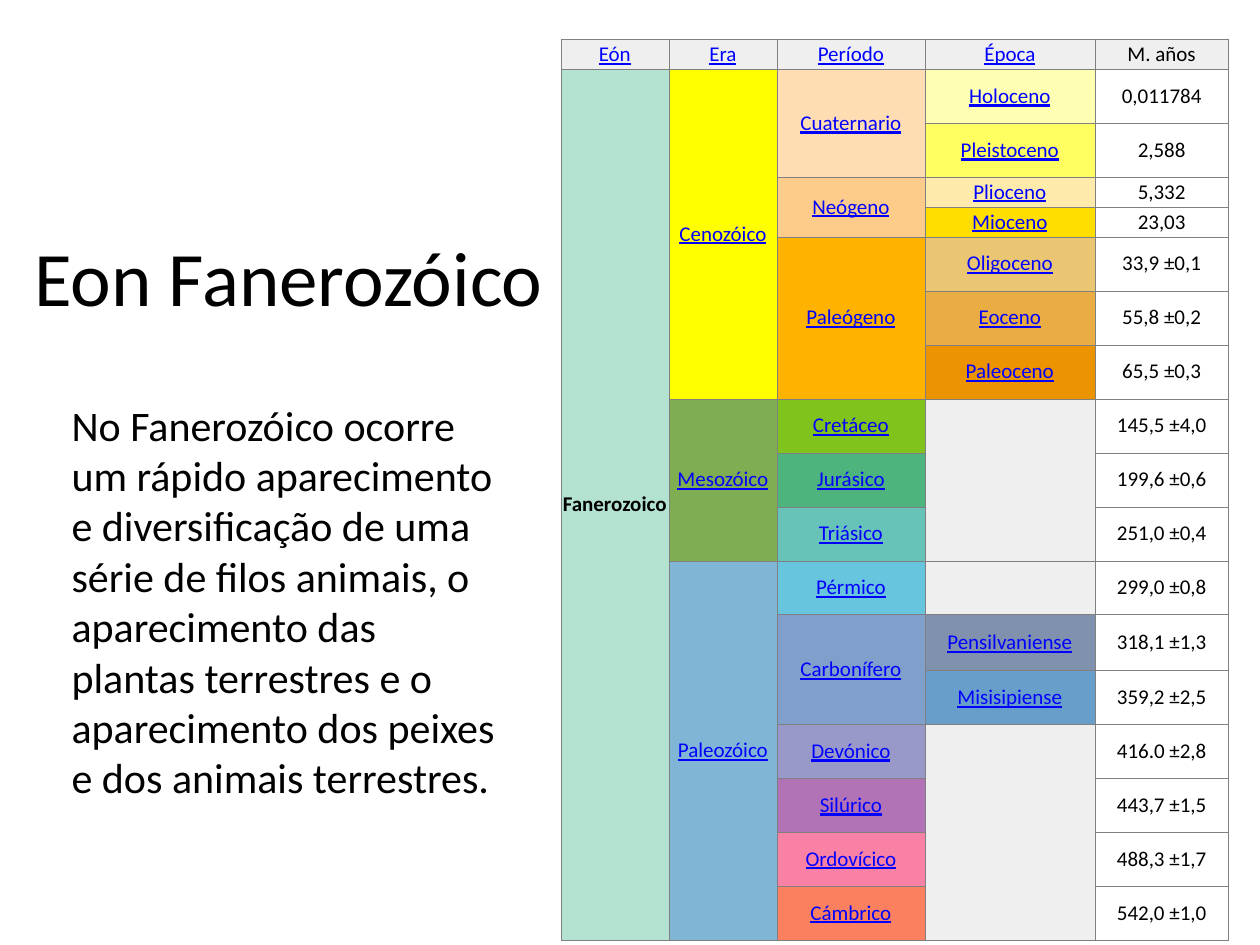
from dataclasses import dataclass

from lxml import etree
from pptx import Presentation
from pptx.dml.color import RGBColor
from pptx.enum import text
from pptx.oxml import ns
from pptx.util import Pt


@dataclass
class Theme:
    font: str = "Calibri"
    ink: str = "000000"
    link: str = "0000FF"
    border: str = "808080"
    blank: str = "EFEFEF"
    title_size: float = 44
    body_size: float = 24
    cell_size: float = 12
    border_width: float = 0.25
    cell_margin: float = 0.72


HEADERS = ["Eón", "Era", "Período", "Época", "M. años"]
COLUMN_WIDTHS = [61.8, 61.8, 84.5, 97.2, 76.3]
SHORT, TALL = 17.1, 30.85
ROW_HEIGHTS = [SHORT] + [TALL] * 2 + [SHORT] * 2 + [TALL] * 7 + [31.7] + [TALL] * 5

EONS = [("Fanerozoico", "B3E2D1", 17)]
ERAS = [
    ("Cenozóico", "FFFF00", 7),
    ("Mesozóico", "7FAD51", 3),
    ("Paleozóico", "80B5D5", 7),
]
PERIODS = [
    ("Cuaternario", "FFDDB3", 2),
    ("Neógeno", "FDCC8A", 2),
    ("Paleógeno", "FFB300", 3),
    ("Cretáceo", "7FC31C", 1),
    ("Jurásico", "4DB47E", 1),
    ("Triásico", "67C3B7", 1),
    ("Pérmico", "67C6DE", 1),
    ("Carbonífero", "809FCA", 2),
    ("Devónico", "9999C9", 1),
    ("Silúrico", "B172B6", 1),
    ("Ordovícico", "F981A6", 1),
    ("Cámbrico", "FB805F", 1),
]
EPOCHS = [
    ("Holoceno", "FFFFB3", 1),
    ("Pleistoceno", "FFFF62", 1),
    ("Plioceno", "FEEBAC", 1),
    ("Mioceno", "FFDE00", 1),
    ("Oligoceno", "EAC672", 1),
    ("Eoceno", "EAAD43", 1),
    ("Paleoceno", "EB9301", 1),
    ("", Theme.blank, 3),
    ("", Theme.blank, 1),
    ("Pensilvaniense", "8091AD", 1),
    ("Misisipiense", "689FCA", 1),
    ("", Theme.blank, 4),
]
AGES = [
    "0,011784", "2,588", "5,332", "23,03", "33,9 ±0,1", "55,8 ±0,2",
    "65,5 ±0,3", "145,5 ±4,0", "199,6 ±0,6", "251,0 ±0,4", "299,0 ±0,8",
    "318,1 ±1,3", "359,2 ±2,5", "416.0 ±2,8", "443,7 ±1,5", "488,3 ±1,7",
    "542,0 ±1,0",
]


class SlideBuilder:
    def __init__(self, slide, theme):
        self.s = slide
        self.theme = theme

    def run(self, p, words, size, color=None, bold=False, underline=False):
        r = p.add_run()
        r.text = words
        r.font.name = self.theme.font
        r.font.size = Pt(size)
        r.font.bold = bold
        r.font.underline = underline
        r.font.color.rgb = RGBColor.from_string(color or self.theme.ink)

    def title(self, words, left, top, width, height):
        sp = self.s.shapes.title
        sp.left, sp.top, sp.width, sp.height = map(Pt, (left, top, width, height))
        tf = sp.text_frame
        tf.vertical_anchor = text.MSO_ANCHOR.MIDDLE
        p = tf.paragraphs[0]
        p.alignment = text.PP_ALIGN.CENTER
        self.run(p, words, self.theme.title_size)

    def paragraph(self, words, left, top, width, height):
        sp = self.s.shapes.add_textbox(*map(Pt, (left, top, width, height)))
        tf = sp.text_frame
        tf.word_wrap = True
        tf.auto_size = text.MSO_AUTO_SIZE.SHAPE_TO_FIT_TEXT
        self.run(tf.paragraphs[0], words, self.theme.body_size)

    def table(self, left, top, widths, heights):
        size = map(Pt, (left, top, sum(widths), sum(heights)))
        tbl = self.s.shapes.add_table(len(heights), len(widths), *size).table
        tbl.first_row = tbl.horz_banding = False
        for column, width in zip(tbl.columns, widths):
            column.width = Pt(width)
        for row, height in zip(tbl.rows, heights):
            row.height = Pt(height)
        for cell in tbl.iter_cells():
            self.plain_cell(cell)
        return tbl

    def plain_cell(self, cell):
        margin = Pt(self.theme.cell_margin)
        cell.margin_left = cell.margin_right = margin
        cell.margin_top = cell.margin_bottom = margin
        cell.vertical_anchor = text.MSO_ANCHOR.MIDDLE
        cell.fill.background()
        p = cell.text_frame.paragraphs[0]
        p.alignment = text.PP_ALIGN.CENTER
        p._p.get_or_add_endParaRPr().set("sz", str(self.theme.cell_size * 100))
        tc_pr = cell._tc.get_or_add_tcPr()
        for i, side in enumerate(("lnL", "lnR", "lnT", "lnB")):
            ln = etree.Element(ns.qn(f"a:{side}"), w=str(Pt(self.theme.border_width)))
            fill = etree.SubElement(ln, ns.qn("a:solidFill"))
            etree.SubElement(fill, ns.qn("a:srgbClr"), val=self.theme.border)
            tc_pr.insert(i, ln)

    def cell(self, cell, words, fill=None, **style):
        if fill:
            cell.fill.solid()
            cell.fill.fore_color.rgb = RGBColor.from_string(fill)
        if words:
            self.run(cell.text_frame.paragraphs[0], words, self.theme.cell_size, **style)

    def column(self, tbl, col, entries, **style):
        row = 1
        for words, fill, span in entries:
            if span > 1:
                tbl.cell(row, col).merge(tbl.cell(row + span - 1, col))
            self.cell(tbl.cell(row, col), words, fill, **style)
            row += span


def main():
    prs = Presentation()
    prs.slide_width, prs.slide_height = Pt(720), Pt(540)
    theme = Theme()
    b = SlideBuilder(prs.slides.add_slide(prs.slide_layouts[5]), theme)
    linked = {"color": theme.link, "underline": True}

    b.title("Eon Fanerozóico", 0, 112.5, 330, 90)

    tbl = b.table(320.4, 22.4, COLUMN_WIDTHS, ROW_HEIGHTS)
    for col, header in enumerate(HEADERS):
        style = {} if header == HEADERS[-1] else linked
        b.cell(tbl.cell(0, col), header, theme.blank, **style)
    b.column(tbl, 0, EONS, bold=True)
    for col, entries in enumerate((ERAS, PERIODS, EPOCHS), 1):
        b.column(tbl, col, entries, **linked)
    b.column(tbl, 4, [(age, None, 1) for age in AGES])

    b.paragraph(
        "No Fanerozóico ocorre um rápido aparecimento e diversificação de uma "
        "série de filos animais, o aparecimento das plantas terrestres e o "
        "aparecimento dos peixes e dos animais terrestres.",
        33.8, 224.6, 258.5, 239.8,
    )
    prs.save("out.pptx")


if __name__ == "__main__":
    main()
